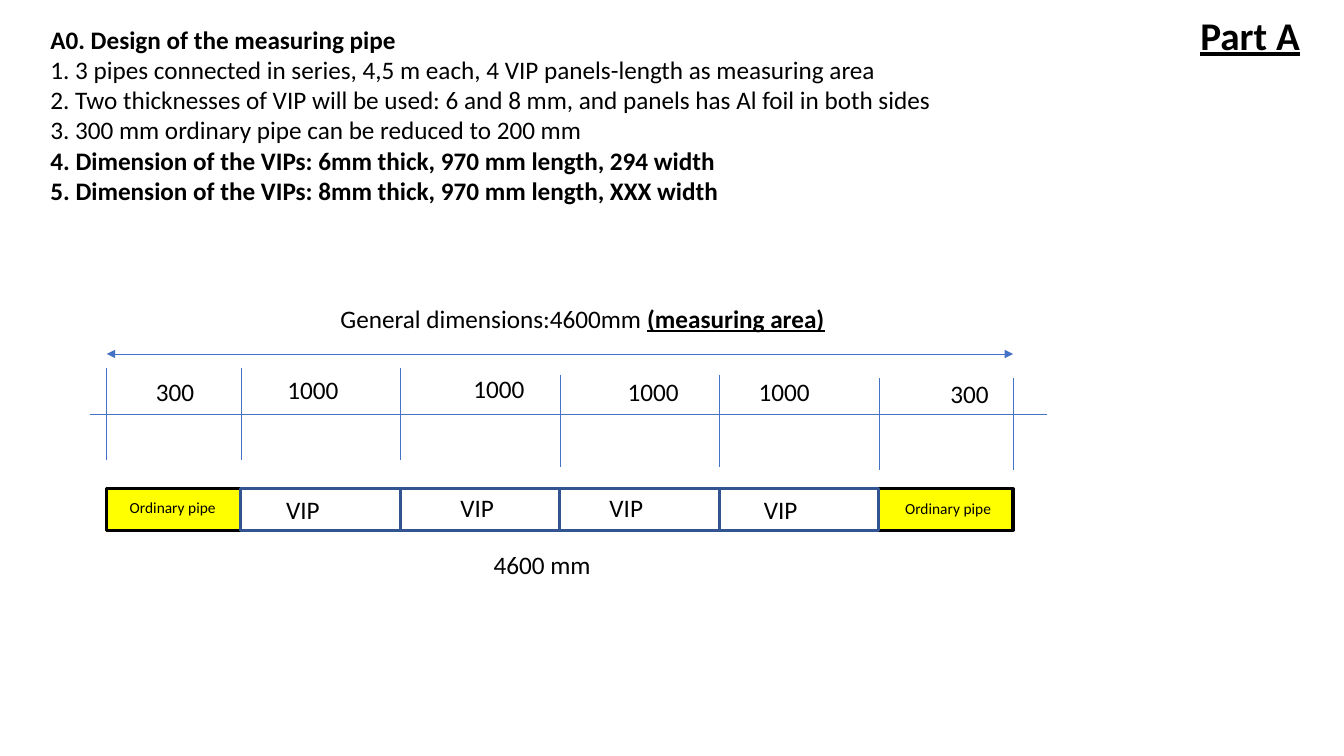
from lxml import etree
from pptx import Presentation
from pptx.dml.color import RGBColor
from pptx.enum.shapes import MSO_CONNECTOR, MSO_SHAPE
from pptx.enum.text import MSO_AUTO_SIZE
from pptx.oxml.ns import qn
from pptx.util import Cm, Pt

STRAIGHT = MSO_CONNECTOR.STRAIGHT
RECTANGLE = MSO_SHAPE.RECTANGLE
FIT_SHAPE = MSO_AUTO_SIZE.SHAPE_TO_FIT_TEXT
rgb = RGBColor.from_string

prs = Presentation()
prs.slide_width, prs.slide_height = Cm(33.87), Cm(19.05)
s = prs.slides.add_slide(prs.slide_layouts[6])


def add_text(x, y, w, h, paragraphs, size=18):
    """Each paragraph is a list of (text, bold, underline) runs."""
    tf = s.shapes.add_textbox(Cm(x), Cm(y), Cm(w), Cm(h)).text_frame
    tf.word_wrap = False
    tf.auto_size = FIT_SHAPE
    for i, runs in enumerate(paragraphs):
        p = tf.add_paragraph() if i else tf.paragraphs[0]
        for text, bold, underline in runs:
            r = p.add_run()
            r.text = text
            r.font.name = "Calibri"
            r.font.size = Pt(size)
            r.font.bold = bold
            r.font.underline = underline
            r.font.color.rgb = rgb("000000")


def add_line(x1, y1, x2, y2):
    sp = s.shapes.add_connector(STRAIGHT, Cm(x1), Cm(y1), Cm(x2), Cm(y2))
    sp.line.color.rgb = rgb("4472C4")
    sp.line.width = Pt(0.5)
    etree.SubElement(sp._element.spPr, qn("a:effectLst"))
    return sp


# Design notes and slide title
notes = [
    ("A0. Design of the measuring pipe", True),
    ("1. 3 pipes connected in series, 4,5 m each, 4 VIP panels-length as measuring area", False),
    ("2. Two thicknesses of VIP will be used: 6 and 8 mm, and panels has Al foil in both sides", False),
    ("3. 300 mm ordinary pipe can be reduced to 200 mm", False),
    ("4. Dimension of the VIPs: 6mm thick, 970 mm length, 294 width", True),
    ("5. Dimension of the VIPs: 8mm thick, 970 mm length, XXX width", True),
]
add_text(1.02, 0.48, 22.96, 4.88, [[(text, bold, False)] for text, bold in notes])
add_text(30, 0.15, 3.05, 1.45, [[("Part A", True, True)]], 28)

# Pipe sections: ordinary pipe at both ends, four VIP panels between
PIPE_W, VIP_W = 3.38, 4.02
vip_edges = [6.07 + VIP_W * i for i in range(5)]
edges = [vip_edges[0] - PIPE_W, *vip_edges, vip_edges[-1] + PIPE_W]
sections = [(edges[0], PIPE_W, "FFFF00", "000000", 2.25),
            (edges[5], PIPE_W, "FFFF00", "000000", 2.25)]
sections += [(x, VIP_W, None, "325491", 2) for x in vip_edges[:-1]]
for x, w, fill, line, weight in sections:
    sp = s.shapes.add_shape(RECTANGLE, Cm(x), Cm(12.32), Cm(w), Cm(1.04))
    sp.shadow.inherit = False
    if fill:
        sp.fill.solid()
        sp.fill.fore_color.rgb = rgb(fill)
    else:
        sp.fill.background()
    sp.line.color.rgb = rgb(line)
    sp.line.width = Pt(weight)

# Section names
for x, y in [(3.02, 12.42), (22.56, 12.45)]:
    add_text(x, y, 2.69, 0.74, [[("Ordinary pipe", False, False)]], 11)
for x, y in [(6.96, 12.34), (11.35, 12.27), (15.11, 12.27), (19, 12.34)]:
    add_text(x, y, 1.37, 1.02, [[("VIP", False, False)]])

# Dimension line with a tick at each section edge
add_line(2.26, 10.44, 26.39, 10.44)
for x, top in zip(edges, [9.27, 9.27, 9.27, 9.45, 9.45, 9.53, 9.53]):
    add_line(x, top, x, top + 2.32)

# Section lengths
lengths = [("300", 3.68, 9.35), ("1000", 6.99, 9.32), ("1000", 11.68, 9.27),
           ("1000", 15.57, 9.37), ("1000", 18.87, 9.35), ("300", 23.7, 9.42)]
for text, x, y in lengths:
    add_text(x, y, 1.5 if text == "300" else 1.8, 1.02, [[(text, False, False)]])

# Overall length
arrow = add_line(edges[0], 8.92, edges[-1], 8.92)
ln = arrow.line._get_or_add_ln()
for end in ("a:headEnd", "a:tailEnd"):
    etree.SubElement(ln, qn(end), type="triangle")
add_text(8.33, 7.52, 12.98, 1.02, [[("General dimensions:4600mm ", False, False),
                                    ("(measuring area)", True, True)]])
add_text(12.19, 13.72, 2.97, 1.02, [[("4600 mm", False, False)]])

prs.save("out.pptx")
